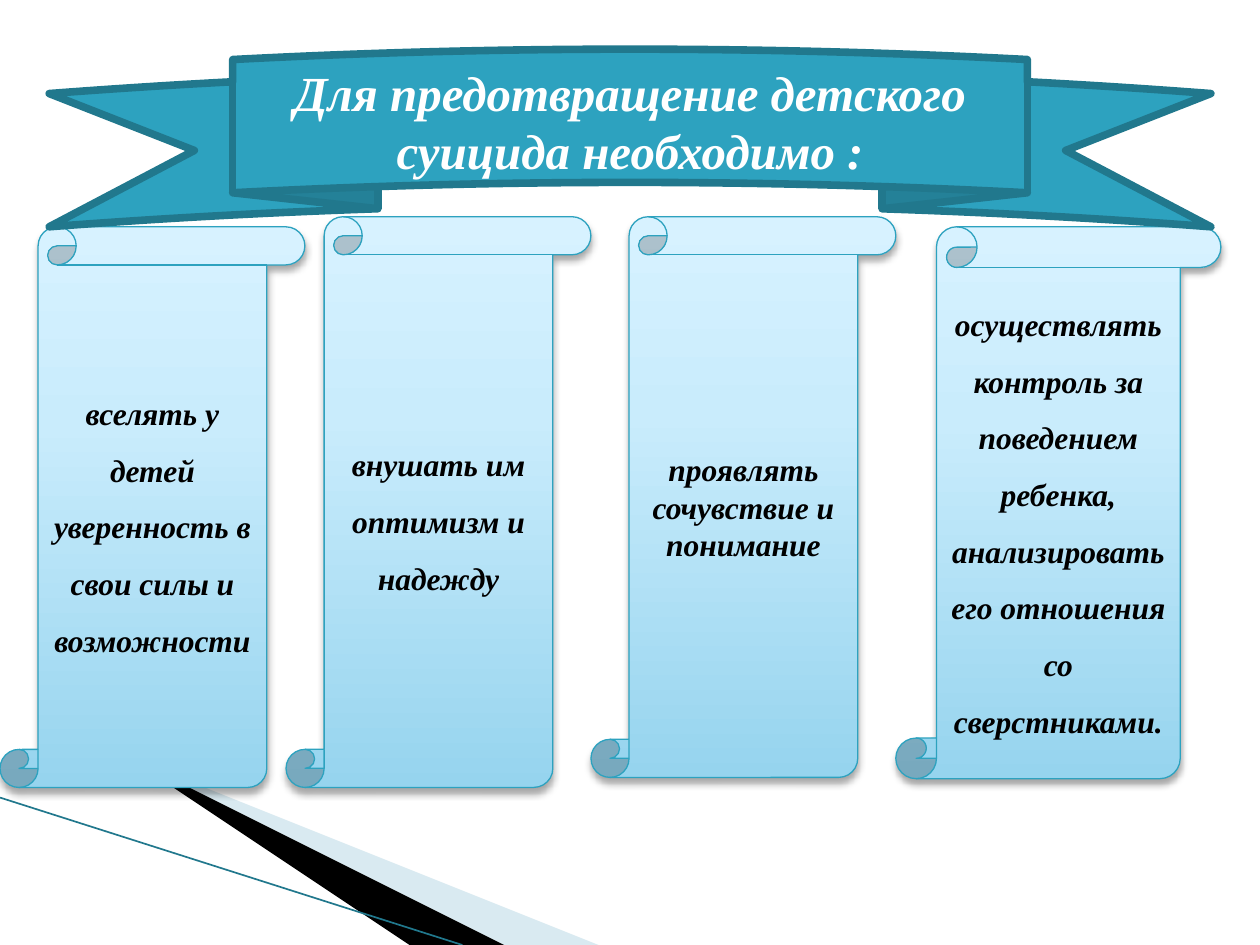
import pptx
import pptx.util
import pptx.dml.color
import pptx.enum.shapes
import pptx.enum.text
import pptx.oxml
import pptx.oxml.ns

Inches = pptx.util.Inches
Pt = pptx.util.Pt
SHAPES = pptx.enum.shapes.MSO_SHAPE
NAMESPACE = pptx.oxml.ns.nsdecls("a")
FONT = "Times New Roman"
COLORS = {
    "teal": "2DA2BF",
    "dark_teal": "21788D",
    "pale_blue": "A0CBDC",
    "scroll_bottom": "96D4EE",
    "scroll_middle": "C9ECFC",
    "scroll_top": "D7F2FF",
    "black": "000000",
    "white": "FFFFFF",
}
SCROLLS = [
    (2.27, 1.72, 2.42, 4.53, 1.5, "внушать им оптимизм и надежду"),
    (4.69, 1.72, 2.42, 4.45, 1.0, "проявлять сочувствие и понимание"),
    (7.11, 1.8, 2.58, 4.38, 1.5,
     "осуществлять контроль за поведением ребенка, "
     "анализировать его отношения со сверстниками."),
    (0, 1.8, 2.42, 4.45, 1.5,
     "вселять у детей уверенность в свои силы и возможности"),
]


def rgb(name):
    return pptx.dml.color.RGBColor.from_string(COLORS[name])


def fill_solid(shape, color):
    shape.fill.solid()
    shape.fill.fore_color.rgb = rgb(color)


def set_line(shape, color, width):
    shape.line.color.rgb = rgb(color)
    shape.line.width = Pt(width)


def write_text(shape, text, size, color, spacing):
    frame = shape.text_frame
    frame.word_wrap = True
    frame.vertical_anchor = pptx.enum.text.MSO_ANCHOR.MIDDLE
    para = frame.paragraphs[0]
    para.alignment = pptx.enum.text.PP_ALIGN.CENTER
    para.line_spacing = spacing
    span = para.add_run()
    span.text = text
    span.font.name = FONT
    span.font.size = Pt(size)
    span.font.bold = True
    span.font.italic = True
    span.font.color.rgb = rgb(color)


def add_wedge(page, points, color, opacity=100):
    builder = page.shapes.build_freeform(*points[0], scale=Inches(1))
    builder.add_line_segments(points[1:], close=True)
    wedge = builder.convert_to_shape()
    wedge.shadow.inherit = False
    fill_solid(wedge, color)
    wedge.line.fill.background()
    if opacity < 100:
        tint = wedge.fill._xPr.find(".//" + pptx.oxml.ns.qn("a:srgbClr"))
        tint.append(pptx.oxml.parse_xml(
            f'<a:alpha {NAMESPACE} val="{opacity * 1000}"/>'))


def add_edge(page, start, end):
    edge = page.shapes.add_connector(
        pptx.enum.shapes.MSO_CONNECTOR.STRAIGHT,
        *(Inches(value) for value in start + end))
    set_line(edge, "dark_teal", 0.95)
    edge._element.spPr.append(
        pptx.oxml.parse_xml(f"<a:effectLst {NAMESPACE}/>"))


def add_scroll(page, left, top, width, height, spacing, text):
    scroll = page.shapes.add_shape(
        SHAPES.VERTICAL_SCROLL,
        *(Inches(value) for value in (left, top, width, height)))
    set_line(scroll, "teal", 0.75)
    stops = [(0, "scroll_bottom"), (65, "scroll_middle"), (100, "scroll_top")]
    stop_xml = "".join(
        f'<a:gs pos="{place * 1000}"><a:srgbClr val="{COLORS[color]}"/></a:gs>'
        for place, color in stops)
    properties = scroll._element.spPr
    outline = properties.find(pptx.oxml.ns.qn("a:ln"))
    outline.addprevious(pptx.oxml.parse_xml(
        f'<a:gradFill {NAMESPACE} rotWithShape="1"><a:gsLst>{stop_xml}</a:gsLst>'
        '<a:lin ang="16200000" scaled="0"/></a:gradFill>'))
    outline.addnext(pptx.oxml.parse_xml(
        f'<a:effectLst {NAMESPACE}><a:outerShdw blurRad="{Pt(4)}" dist="{Pt(3)}" '
        f'dir="5400000" rotWithShape="0"><a:srgbClr val="{COLORS["black"]}">'
        '<a:alpha val="35000"/></a:srgbClr></a:outerShdw></a:effectLst>'))
    write_text(scroll, text, 18, "black", spacing)


def add_ribbon(page, text):
    ribbon = page.shapes.add_shape(
        SHAPES.CURVED_UP_RIBBON,
        Inches(0.39), Inches(0.39), Inches(9.22), Inches(1.41))
    for index, value in enumerate((0.25, 0.684, 0.125)):
        ribbon.adjustments[index] = value
    ribbon.shadow.inherit = False
    fill_solid(ribbon, "teal")
    set_line(ribbon, "dark_teal", 4.33)
    ribbon.line._ln.append(pptx.oxml.parse_xml(f"<a:round {NAMESPACE}/>"))
    write_text(ribbon, text, 28, "white", 1.0)


def main():
    deck = pptx.Presentation()
    deck.slide_width = Inches(10)
    deck.slide_height = Inches(7.5)
    page = deck.slides.add_slide(deck.slide_layouts[6])
    page.background.fill.solid()
    page.background.fill.fore_color.rgb = rgb("white")
    add_wedge(page, [(0.55, 6.5), (5.92, 7.5), (4.54, 7.5)], "pale_blue", 40)
    add_wedge(page, [(0.53, 6.49), (4.53, 7.5), (3.67, 7.5)], "black")
    add_edge(page, (0, 6.33), (3.67, 7.5))
    for scroll in SCROLLS:
        add_scroll(page, *scroll)
    add_ribbon(page, "Для предотвращение детского суицида необходимо :")
    deck.save("out.pptx")


if __name__ == "__main__":
    main()
